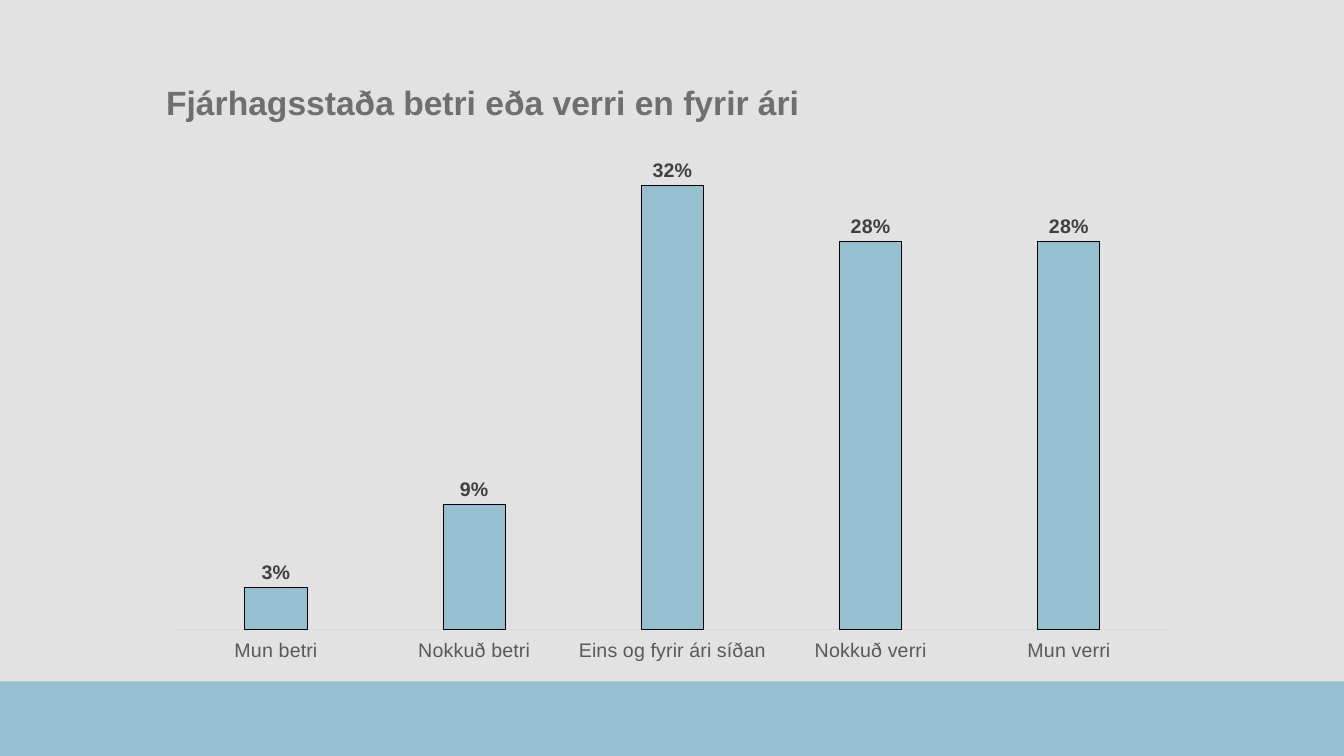
from typing import Any, NamedTuple

from lxml.etree import fromstring
from pptx import Presentation
from pptx.chart.data import CategoryChartData as ChartData
from pptx.dml.color import RGBColor
from pptx.enum.chart import XL_CHART_TYPE as ChartType
from pptx.enum.chart import XL_LABEL_POSITION as LabelPosition
from pptx.enum.chart import XL_TICK_LABEL_POSITION as TickLabels
from pptx.enum.chart import XL_TICK_MARK as TickMark
from pptx.enum.shapes import MSO_SHAPE as Shape
from pptx.enum.text import MSO_ANCHOR as Anchor
from pptx.util import Inches, Pt

BLUE = "96C0CF"
BACKGROUND = "E2E2E2"
LEFT, WIDTH = 1.55, 10.24
CHART_NS = "http://schemas.openxmlformats.org/drawingml/2006/chart"


class Answer(NamedTuple):
    label: str
    share: float


ANSWERS = [
    Answer("Mun betri", 0.03),
    Answer("Nokkuð betri", 0.09),
    Answer("Eins og fyrir ári síðan", 0.32),
    Answer("Nokkuð verri", 0.28),
    Answer("Mun verri", 0.28),
]


def rgb(hex_color: str) -> RGBColor:
    return RGBColor.from_string(hex_color)


def set_all(target: Any, values: dict[str, Any]) -> None:
    for name, value in values.items():
        setattr(target, name, value)


def set_font(font: Any, size: float, color: str, bold: bool = False) -> None:
    set_all(font, {"name": "Arial", "size": Pt(size), "bold": bold})
    font.color.rgb = rgb(color)


def set_fill(fill: Any, color: str) -> None:
    fill.solid()
    fill.fore_color.rgb = rgb(color)


def set_line(line: Any, color: str) -> None:
    line.width = Pt(0.75)
    line.color.rgb = rgb(color)


def add_band(slide: Any) -> None:
    band = slide.shapes.add_shape(
        Shape.RECTANGLE, 0, Inches(6.76), Inches(13.33), Inches(0.74))
    band.shadow.inherit = False
    set_fill(band.fill, BLUE)
    band.line.fill.background()


def add_heading(slide: Any) -> None:
    heading = slide.shapes.add_textbox(
        Inches(LEFT), Inches(0.7), Inches(WIDTH), Inches(0.68)).text_frame
    set_all(heading, {"word_wrap": True, "vertical_anchor": Anchor.MIDDLE})
    line = heading.paragraphs[0]
    line.line_spacing = 0.9
    run = line.add_run()
    run.text = "Fjárhagsstaða betri eða verri en fyrir ári"
    set_font(run.font, 24, "706F6F", bold=True)


def set_plot_area(chart: Any, x: float, y: float, w: float, h: float) -> None:
    plot_area = chart.plots[0]._element.getparent()
    for old in plot_area.findall(f"{{{CHART_NS}}}layout"):
        plot_area.remove(old)
    plot_area.insert(0, fromstring(
        f'<c:layout xmlns:c="{CHART_NS}"><c:manualLayout>'
        '<c:layoutTarget val="inner"/><c:xMode val="edge"/><c:yMode val="edge"/>'
        f'<c:x val="{x}"/><c:y val="{y}"/><c:w val="{w}"/><c:h val="{h}"/>'
        '</c:manualLayout></c:layout>'))


def add_answer_chart(slide: Any) -> None:
    data = ChartData(number_format="0%")
    data.categories = [answer.label for answer in ANSWERS]
    data.add_series("Series 1", [answer.share for answer in ANSWERS])
    chart = slide.shapes.add_chart(
        ChartType.COLUMN_CLUSTERED, Inches(LEFT), Inches(1.38),
        Inches(WIDTH), Inches(5.23), data).chart
    set_all(chart, {"has_legend": False, "has_title": False})
    set_font(chart.font, 10, "000000")
    set_plot_area(chart, 0.02, 0.01, 0.96, 0.92)

    # Axes
    answers_axis, share_axis = chart.category_axis, chart.value_axis
    set_all(answers_axis, {
        "major_tick_mark": TickMark.NONE,
        "minor_tick_mark": TickMark.NONE,
        "tick_label_position": TickLabels.LOW,
        "has_major_gridlines": False,
    })
    set_font(answers_axis.tick_labels.font, 14, "595959")
    set_line(answers_axis.format.line, "D9D9D9")
    set_all(share_axis, {
        "visible": False,
        "has_major_gridlines": False,
        "minimum_scale": 0,
        "maximum_scale": 0.35,
    })
    set_all(share_axis.tick_labels,
            {"number_format": "0%", "number_format_is_linked": False})

    # Columns and their labels
    columns = chart.plots[0]
    set_all(columns, {"gap_width": 219, "overlap": -27, "vary_by_categories": False})
    shares = columns.series[0]
    set_fill(shares.format.fill, BLUE)
    set_line(shares.format.line, "000000")
    labels = shares.data_labels
    set_all(labels, {
        "show_value": True,
        "position": LabelPosition.OUTSIDE_END,
        "number_format": "0%",
        "number_format_is_linked": False,
    })
    set_font(labels.font, 14, "404040", bold=True)


def main() -> None:
    deck = Presentation()
    set_all(deck, {"slide_width": Inches(13.33), "slide_height": Inches(7.5)})
    slide = deck.slides.add_slide(deck.slide_layouts[6])
    set_fill(slide.background.fill, BACKGROUND)
    add_band(slide)
    add_heading(slide)
    add_answer_chart(slide)
    deck.save("out.pptx")


if __name__ == "__main__":
    main()
